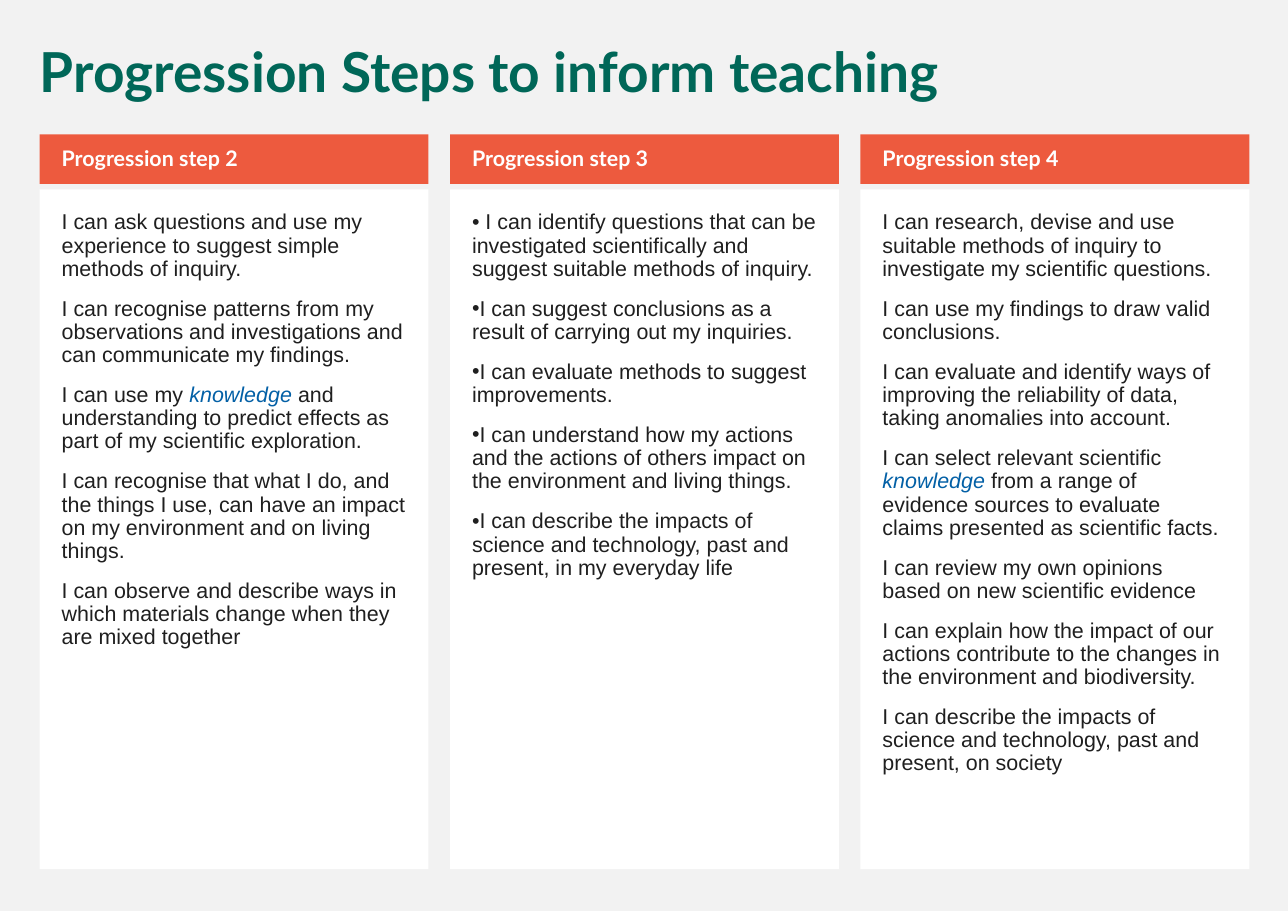
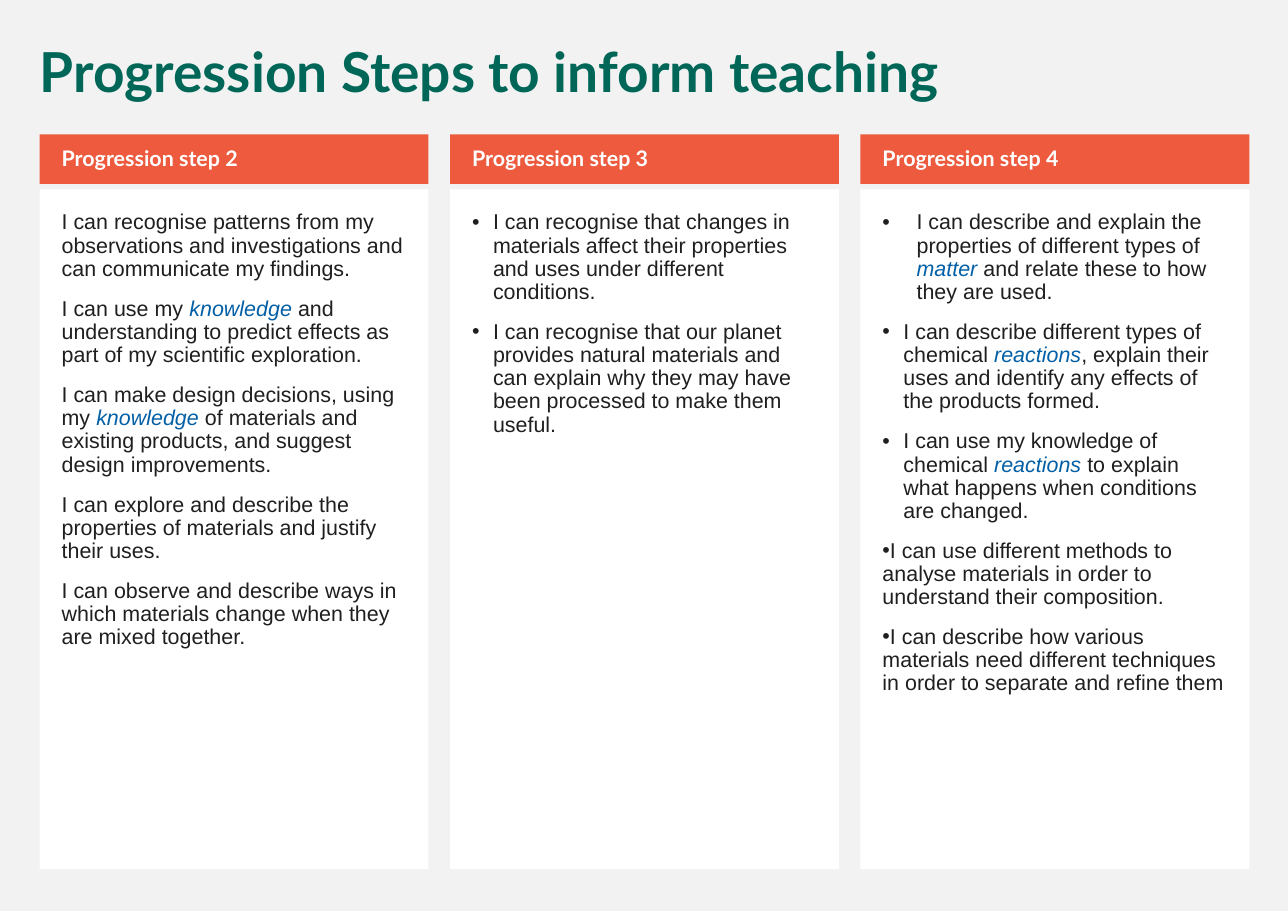
"""Build two slides that compare science progression steps in three columns."""
import dataclasses

import lxml.etree
import pptx
import pptx.dml.color
import pptx.enum.shapes
import pptx.enum.text
import pptx.oxml.ns
import pptx.util

Inches = pptx.util.Inches


@dataclasses.dataclass(frozen=True)
class Theme:
    background: str = "F2F2F2"
    panel: str = "FFFFFF"
    band: str = "ED5A3E"
    title: str = "006758"
    body: str = "1F1F1F"
    keyword: str = "0360A6"
    heading_font: str = "Lato"
    body_font: str = "Arial"
    title_size: int = 36
    text_size: int = 14
    space_before: int = 11
    line_spacing: float = 0.9


TITLE = "Progression Steps to inform teaching"
HEADINGS = ["Progression step 2", "Progression step 3", "Progression step 4"]
COLUMN_WIDTH = 3.53
FIRST_LEFT, LAST_LEFT = 0.36, 7.81
COLUMN_STEP = (LAST_LEFT - FIRST_LEFT) / (len(HEADINGS) - 1)
PLAIN, FLUSH, NARROW, WIDE = None, 0, 0.19, 0.31

# Each column is a list of (bullet indent, statements); *asterisks* mark keywords.
INQUIRY = [
    [(PLAIN, [
        "I can ask questions and use my experience to suggest simple methods of inquiry.",
        "I can recognise patterns from my observations and investigations and can communicate my findings.",
        "I can use my *knowledge* and understanding to predict effects as part of my scientific exploration.",
        "I can recognise that what I do, and the things I use, can have an impact on my environment and on living things.",
        "I can observe and describe ways in which materials change when they are mixed together",
    ])],
    [(FLUSH, [
        " I can identify questions that can be investigated scientifically and suggest suitable methods of inquiry.",
        "I can suggest conclusions as a result of carrying out my inquiries.",
        "I can evaluate methods to suggest improvements.",
        "I can understand how my actions and the actions of others impact on the environment and living things.",
        "I can describe the impacts of science and technology, past and present, in my everyday life",
    ])],
    [(PLAIN, [
        "I can research, devise and use suitable methods of inquiry to investigate my scientific questions.",
        "I can use my findings to draw valid conclusions.",
        "I can evaluate and identify ways of improving the reliability of data, taking anomalies into account.",
        "I can select relevant scientific *knowledge* from a range of evidence sources to evaluate claims presented as scientific facts.",
        "I can review my own opinions based on new scientific evidence",
        "I can explain how the impact of our actions contribute to the changes in the environment and biodiversity.",
        "I can describe the impacts of science and technology, past and present, on society",
    ])],
]
MATERIALS = [
    [(PLAIN, [
        "I can recognise patterns from my observations and investigations and can communicate my findings.",
        "I can use my *knowledge* and understanding to predict effects as part of my scientific exploration.",
        "I can make design decisions, using my *knowledge* of materials and existing products, and suggest design improvements.",
        "I can explore and describe the properties of materials and justify their uses.",
        "I can observe and describe ways in which materials change when they are mixed together.",
    ])],
    [(NARROW, [
        "I can recognise that changes in materials affect their properties and uses under different conditions.",
        "I can recognise that our planet provides natural materials and can explain why they may have been processed to make them useful.",
    ])],
    [
        (WIDE, [
            "I can describe and explain the properties of different types of *matter* and relate these to how they are used.",
        ]),
        (NARROW, [
            "I can describe different types of chemical *reactions*, explain their uses and identify any effects of the products formed.",
            "I can use my knowledge of chemical *reactions* to explain what happens when conditions are changed.",
        ]),
        (FLUSH, [
            "I can use different methods to analyse materials in order to understand their composition.",
            "I can describe how various materials need different techniques in order to separate and refine them",
        ]),
    ],
]


class SlideBuilder:
    def __init__(self, deck, theme):
        self.deck = deck
        self.theme = theme
        self.page = None
        self.fill(deck.slide_master.background, theme.background)

    def fill(self, target, color):
        target.fill.solid()
        target.fill.fore_color.rgb = pptx.dml.color.RGBColor.from_string(color)

    def apply(self, target, **values):
        for name, value in values.items():
            setattr(target, name, value)

    def new_page(self):
        self.page = self.deck.slides.add_slide(self.deck.slide_layouts[5])

    def frame(self, box, margins, anchor):
        left, top, right, bottom = map(Inches, margins)
        self.apply(box.text_frame, margin_left=left, margin_top=top,
                   margin_right=right, margin_bottom=bottom, word_wrap=True,
                   auto_size=pptx.enum.text.MSO_AUTO_SIZE.NONE, vertical_anchor=anchor)

    def paragraph(self, para):
        self.apply(para, alignment=pptx.enum.text.PP_ALIGN.LEFT,
                   line_spacing=self.theme.line_spacing,
                   space_before=pptx.util.Pt(self.theme.space_before))

    def span(self, para, text, color, font, size, bold=False, italic=False):
        span = para.add_run()
        span.text = text
        self.apply(span.font, name=font, size=pptx.util.Pt(size), bold=bold, italic=italic)
        span.font.color.rgb = pptx.dml.color.RGBColor.from_string(color)

    def bullet(self, para, indent):
        properties = para._p.get_or_add_pPr()
        properties.set("marL", str(Inches(indent)))
        properties.set("indent", str(-Inches(indent)))
        for tag, attribute, value in (("a:buFont", "typeface", self.theme.body_font),
                                      ("a:buChar", "char", "•")):
            element = lxml.etree.SubElement(properties, pptx.oxml.ns.qn(tag))
            element.set(attribute, value)

    def title(self, text):
        box = self.page.shapes.title
        self.apply(box, left=Inches(0.26), top=Inches(0.36),
                   width=Inches(11.08), height=Inches(0.65))
        self.frame(box, (0.1, 0.05, 0.1, 0.05), pptx.enum.text.MSO_ANCHOR.TOP)
        para = box.text_frame.paragraphs[0]
        self.paragraph(para)
        self.span(para, text, self.theme.title, self.theme.heading_font,
                  self.theme.title_size, bold=True)

    def rectangle(self, left, top, height, color):
        box = self.page.shapes.add_shape(
            pptx.enum.shapes.MSO_SHAPE.RECTANGLE,
            Inches(left), Inches(top), Inches(COLUMN_WIDTH), Inches(height))
        box.shadow.inherit = False
        box.line.fill.background()
        self.fill(box, color)
        return box

    def heading(self, left, text):
        box = self.rectangle(left, 1.22, 0.45, self.theme.band)
        self.frame(box, (0.2, 0.05, 0.1, 0.05), pptx.enum.text.MSO_ANCHOR.MIDDLE)
        para = box.text_frame.paragraphs[0]
        self.paragraph(para)
        self.span(para, text, self.theme.panel, self.theme.heading_font,
                  self.theme.text_size, bold=True)

    def panel(self, left, groups):
        box = self.rectangle(left, 1.72, 6.17, self.theme.panel)
        self.frame(box, (0.2, 0.2, 0.2, 0.2), pptx.enum.text.MSO_ANCHOR.TOP)
        statements = [(indent, text) for indent, texts in groups for text in texts]
        for number, (indent, text) in enumerate(statements):
            para = box.text_frame.add_paragraph() if number else box.text_frame.paragraphs[0]
            self.paragraph(para)
            if indent is not PLAIN:
                self.bullet(para, indent)
            for position, part in enumerate(text.split("*")):
                keyword = position % 2 == 1
                color = self.theme.keyword if keyword else self.theme.body
                self.span(para, part, color, self.theme.body_font,
                          self.theme.text_size, italic=keyword)


def main():
    deck = pptx.Presentation()
    deck.slide_width, deck.slide_height = Inches(11.69), Inches(8.27)
    builder = SlideBuilder(deck, Theme())
    for columns in (INQUIRY, MATERIALS):
        builder.new_page()
        builder.title(TITLE)
        for number, (heading, groups) in enumerate(zip(HEADINGS, columns)):
            left = FIRST_LEFT + number * COLUMN_STEP
            builder.panel(left, groups)
            builder.heading(left, heading)
    deck.save("out.pptx")


if __name__ == "__main__":
    main()
